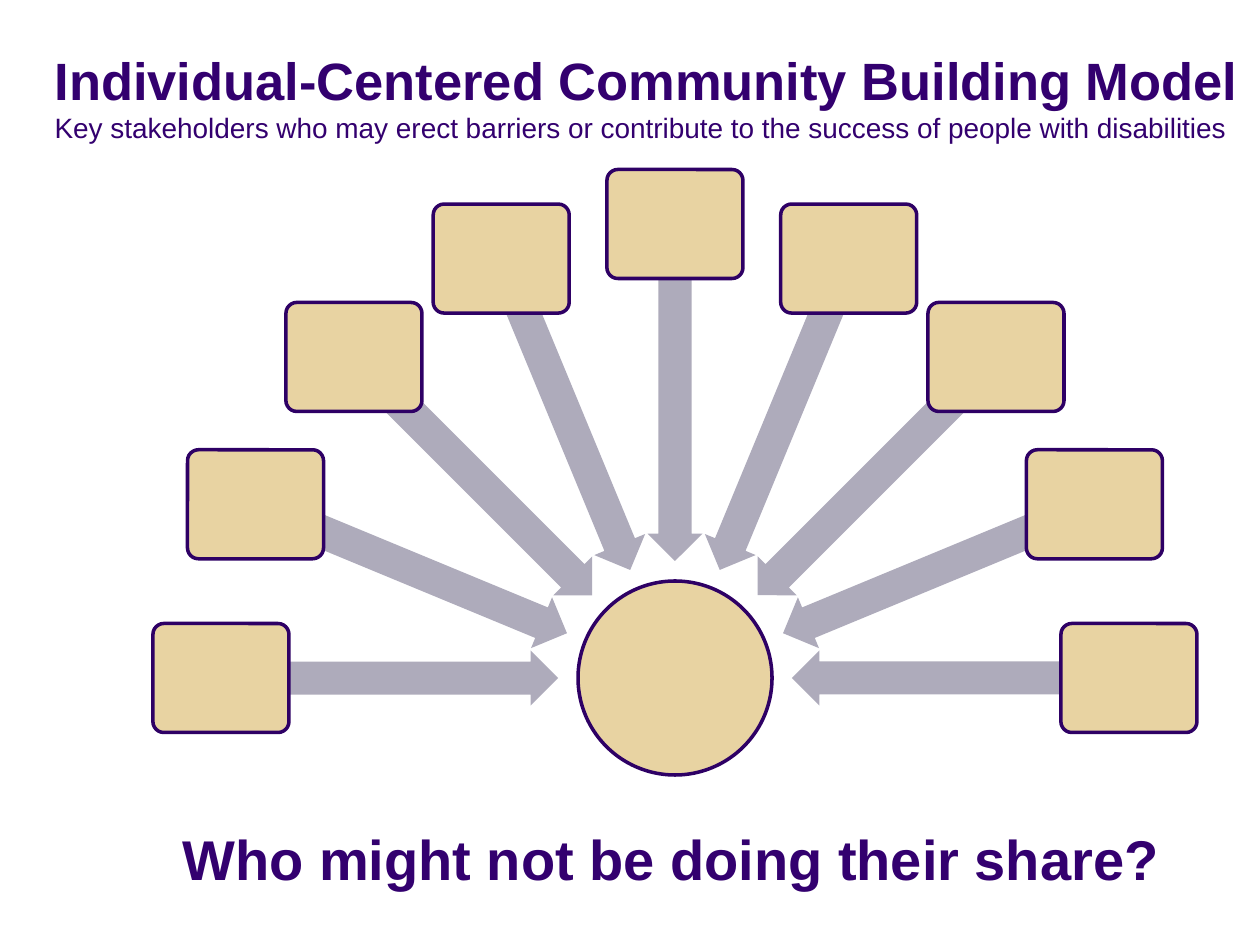
"""Builds the community building model slide: stakeholders around one individual."""
from dataclasses import dataclass
from math import cos, radians, sin

from pptx import Presentation
from pptx.dml.color import RGBColor
from pptx.enum.shapes import MSO_SHAPE
from pptx.enum.text import MSO_ANCHOR, MSO_AUTO_SIZE, PP_ALIGN
from pptx.shapes.autoshape import Shape
from pptx.shapes.shapetree import GroupShapes
from pptx.text.text import TextFrame
from pptx.util import Emu, Pt

ELLIPSE = MSO_SHAPE.OVAL
ARROW = MSO_SHAPE.LEFT_ARROW
ROUNDED = MSO_SHAPE.ROUNDED_RECTANGLE
TOP = MSO_ANCHOR.TOP
LEFT = PP_ALIGN.LEFT
NO_AUTOFIT = MSO_AUTO_SIZE.NONE
FIT_SHAPE = MSO_AUTO_SIZE.SHAPE_TO_FIT_TEXT

PX_PER_INCH = 126
TITLE_ONLY = 5


@dataclass(frozen=True)
class Theme:
    font: str = "Arial"
    text: RGBColor = RGBColor(0x33, 0x00, 0x6F)
    node: RGBColor = RGBColor(0xE8, 0xD3, 0xA2)
    outline: RGBColor = RGBColor(0x2E, 0x00, 0x65)
    arrow: RGBColor = RGBColor(0xAE, 0xAB, 0xBB)
    outline_width: int = 2
    title_size: int = 30
    subtitle_size: int = 16
    question_size: int = 32


@dataclass(frozen=True)
class Part:
    """A kind of shape placed around the hub; lengths in px."""
    preset: MSO_SHAPE
    width: int
    height: int
    orbit: int
    fill: RGBColor
    adjustments: tuple[float, ...] = ()
    outlined: bool = True


THEME = Theme()
HUB_X, HUB_Y = 675, 678
HUB = Part(ELLIPSE, 194, 194, 0, THEME.node)
SPOKE = Part(ARROW, 338, 55, 286, THEME.arrow, (0.6, 0.5), outlined=False)
STAKEHOLDER = Part(ROUNDED, 136, 109, 454, THEME.node, (0.1,))
STAKEHOLDER_COUNT = 9


def px(length: float) -> Emu:
    return Emu(round(length * 914400 / PX_PER_INCH))


def add_part(shapes: GroupShapes, part: Part, angle: float = 0) -> Shape:
    """Centre a part on its orbit, at a clockwise angle from the right."""
    center_x = HUB_X + part.orbit * cos(radians(angle))
    center_y = HUB_Y + part.orbit * sin(radians(angle))
    shape = shapes.add_shape(
        part.preset,
        px(center_x - part.width / 2), px(center_y - part.height / 2),
        px(part.width), px(part.height),
    )
    shape.shadow.inherit = False
    for index, value in enumerate(part.adjustments):
        shape.adjustments[index] = value
    shape.fill.solid()
    shape.fill.fore_color.rgb = part.fill
    if part.outlined:
        shape.line.color.rgb = THEME.outline
        shape.line.width = Pt(THEME.outline_width)
    else:
        shape.line.fill.background()
    return shape


def place(shape: Shape, left: int, top: int, width: int, height: int) -> None:
    shape.left, shape.top = px(left), px(top)
    shape.width, shape.height = px(width), px(height)


def format_lines(text_frame: TextFrame, styles: list[tuple[int, bool]]) -> None:
    """Apply one (size, bold) style to each paragraph."""
    for paragraph, (size, bold) in zip(text_frame.paragraphs, styles):
        paragraph.alignment = LEFT
        for run in paragraph.runs:
            run.font.name = THEME.font
            run.font.size = Pt(size)
            run.font.bold = bold
            run.font.color.rgb = THEME.text


def main() -> None:
    presentation = Presentation()
    presentation.slide_width, presentation.slide_height = px(1260), px(945)
    slide = presentation.slides.add_slide(presentation.slide_layouts[TITLE_ONLY])

    # Title and subtitle
    title = slide.shapes.title
    place(title, 42, 37, 1239, 183)
    title_frame = title.text_frame
    title_frame.text = (
        "Individual-Centered Community Building Model\n"
        "Key stakeholders who may erect barriers or contribute to the success"
        " of people with disabilities"
    )
    title_frame.word_wrap = True
    title_frame.auto_size = NO_AUTOFIT
    title_frame.vertical_anchor = TOP
    title_frame.margin_top = px(11)
    format_lines(title_frame, [(THEME.title_size, True), (THEME.subtitle_size, False)])

    # Half circle of stakeholders pointing at the hub
    diagram = slide.shapes.add_group_shape().shapes
    add_part(diagram, HUB)
    for index in range(STAKEHOLDER_COUNT):
        angle = 180 + index * 180 / (STAKEHOLDER_COUNT - 1)
        add_part(diagram, SPOKE, angle).rotation = angle % 360
        add_part(diagram, STAKEHOLDER, angle)

    # Closing question
    question = slide.shapes.add_textbox(px(170), px(818), px(1010), px(81))
    question_frame = question.text_frame
    question_frame.text = "Who might not be doing their share?"
    question_frame.word_wrap = False
    question_frame.auto_size = FIT_SHAPE
    format_lines(question_frame, [(THEME.question_size, True)])

    presentation.save("out.pptx")


if __name__ == "__main__":
    main()
